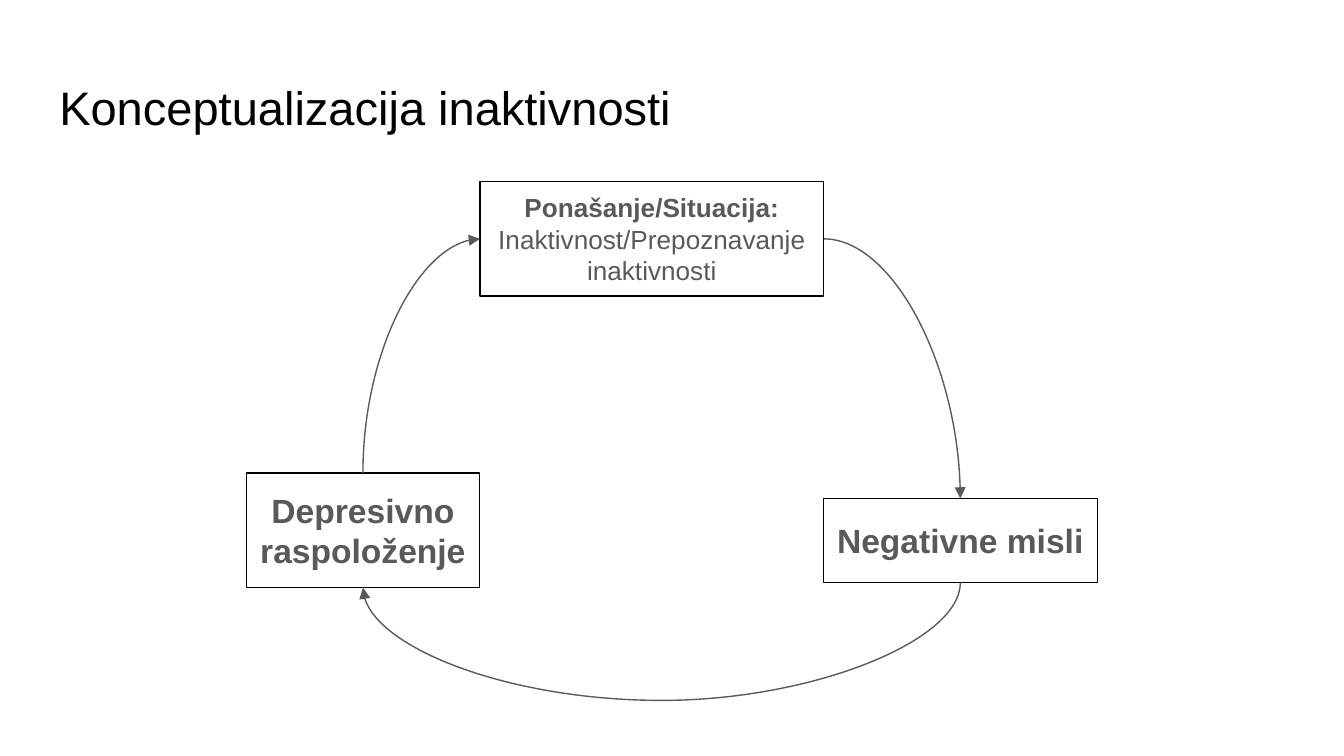
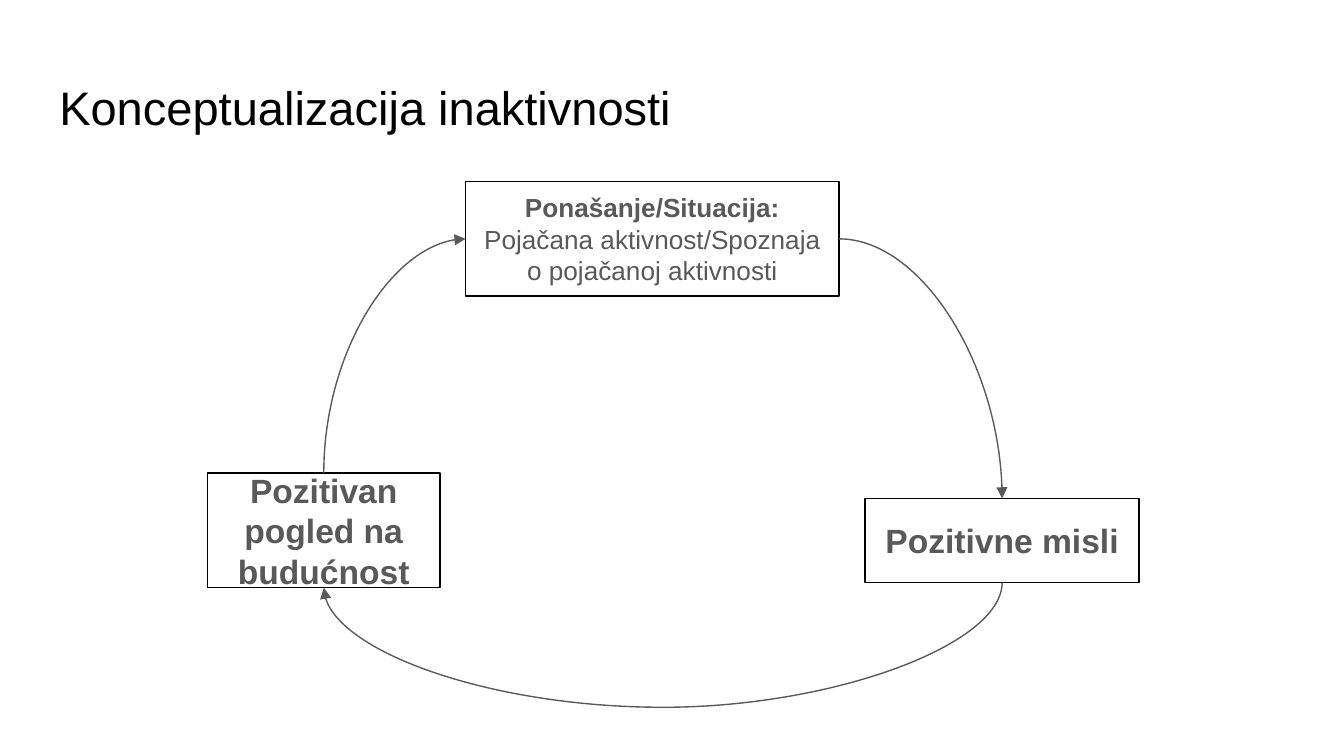
from lxml.etree import SubElement
from pptx import Presentation
from pptx.dml.color import RGBColor
from pptx.enum.shapes import MSO_CONNECTOR, MSO_SHAPE
from pptx.enum.text import MSO_ANCHOR, MSO_AUTO_SIZE, PP_ALIGN
from pptx.oxml.ns import qn
from pptx.util import Cm, Pt

BLACK = RGBColor(0x00, 0x00, 0x00)
GREY = RGBColor(0x59, 0x59, 0x59)
FONT = "Arial"
TITLE = "Konceptualizacija inaktivnosti"
TOP, LEFT, BOTTOM, RIGHT = range(4)

CYCLES = [
    {
        "act": (9.07, 6.5, "Inaktivnost/Prepoznavanje inaktivnosti"),
        "thought": (15.56, "Negativne misli"),
        "mood": (4.66, "Depresivno raspoloženje"),
        "drop": 2.23,
    },
    {
        "act": (8.8, 7.06, "Pojačana aktivnost/Spoznaja o pojačanoj aktivnosti"),
        "thought": (16.35, "Pozitivne misli"),
        "mood": (3.92, "Pozitivan pogled na budućnost"),
        "drop": 2.36,
    },
]


def write(frame, *lines, size=18, color=GREY, align=PP_ALIGN.CENTER,
          anchor=MSO_ANCHOR.MIDDLE):
    frame.word_wrap = True
    frame.auto_size = MSO_AUTO_SIZE.NONE
    frame.vertical_anchor = anchor
    frame.margin_left = frame.margin_right = Cm(0.25)
    frame.margin_top = frame.margin_bottom = Cm(0.25)
    for index, (text, bold) in enumerate(lines):
        para = frame.add_paragraph() if index else frame.paragraphs[0]
        para.alignment = align
        para.line_spacing = 1.0
        run = para.add_run()
        run.text = text
        font = run.font
        font.name, font.size, font.bold = FONT, Pt(size), bold
        font.color.rgb = color


def add_title(slide):
    title = slide.shapes.title
    title.left, title.top = Cm(0.87), Cm(1.24)
    title.width, title.height = Cm(23.67), Cm(1.6)
    write(title.text_frame, (TITLE, False), size=25.2, color=BLACK,
          align=PP_ALIGN.LEFT, anchor=MSO_ANCHOR.TOP)


def add_box(slide, left, top, width, height, *lines, size=18):
    box = slide.shapes.add_shape(
        MSO_SHAPE.RECTANGLE, Cm(left), Cm(top), Cm(width), Cm(height))
    box.shadow.inherit = False
    box.fill.background()
    box.line.color.rgb = BLACK
    box.line.width = Pt(0.75)
    write(box.text_frame, *lines, size=size)
    return box


def add_curve(slide, start, start_site, end, end_site, turn=0, drop=None):
    curve = slide.shapes.add_connector(MSO_CONNECTOR.CURVE, 0, 0, 0, 0)
    curve.begin_connect(start, start_site)
    curve.end_connect(end, end_site)
    mid_x = (curve.begin_x + curve.end_x) // 2
    mid_y = (curve.begin_y + curve.end_y) // 2
    width, height = curve.width, curve.height
    if turn:
        width, height = height, width
    curve.left, curve.top = mid_x - width // 2, mid_y - height // 2
    curve.width, curve.height = width, height
    curve.line.color.rgb = GREY
    curve.line.width = Pt(0.75)

    props = curve._element.spPr
    frame = props.find(qn("a:xfrm"))
    for flip in ("flipH", "flipV"):
        frame.attrib.pop(flip, None)
    frame.set("rot", str(turn * 60000))
    shape = props.find(qn("a:prstGeom"))
    if drop is None:
        shape.set("prst", "curvedConnector2")
    else:
        ratio = round(Cm(drop) / width * 100000)
        guides = shape.find(qn("a:avLst"))
        SubElement(guides, qn("a:gd"), name="adj1", fmla=f"val {ratio}")
    SubElement(props.find(qn("a:ln")), qn("a:tailEnd"), type="triangle")
    SubElement(props, qn("a:effectLst"))


def add_cycle(deck, cycle):
    slide = deck.slides.add_slide(deck.slide_layouts[5])
    add_title(slide)
    left, width, text = cycle["act"]
    act = add_box(slide, left, 3.43, width, 2.17,
                  ("Ponašanje/Situacija:", True), (text, False), size=14)
    left, text = cycle["thought"]
    thought = add_box(slide, left, 9.42, 5.18, 1.59, (text, True))
    left, text = cycle["mood"]
    mood = add_box(slide, left, 8.94, 4.4, 2.17, (text, True))
    add_curve(slide, act, RIGHT, thought, TOP)
    add_curve(slide, mood, TOP, act, LEFT, turn=270)
    add_curve(slide, thought, BOTTOM, mood, BOTTOM, turn=90, drop=cycle["drop"])


def main():
    deck = Presentation()
    deck.slide_width, deck.slide_height = Cm(25.4), Cm(14.29)
    for cycle in CYCLES:
        add_cycle(deck, cycle)
    deck.save("out.pptx")


if __name__ == "__main__":
    main()
